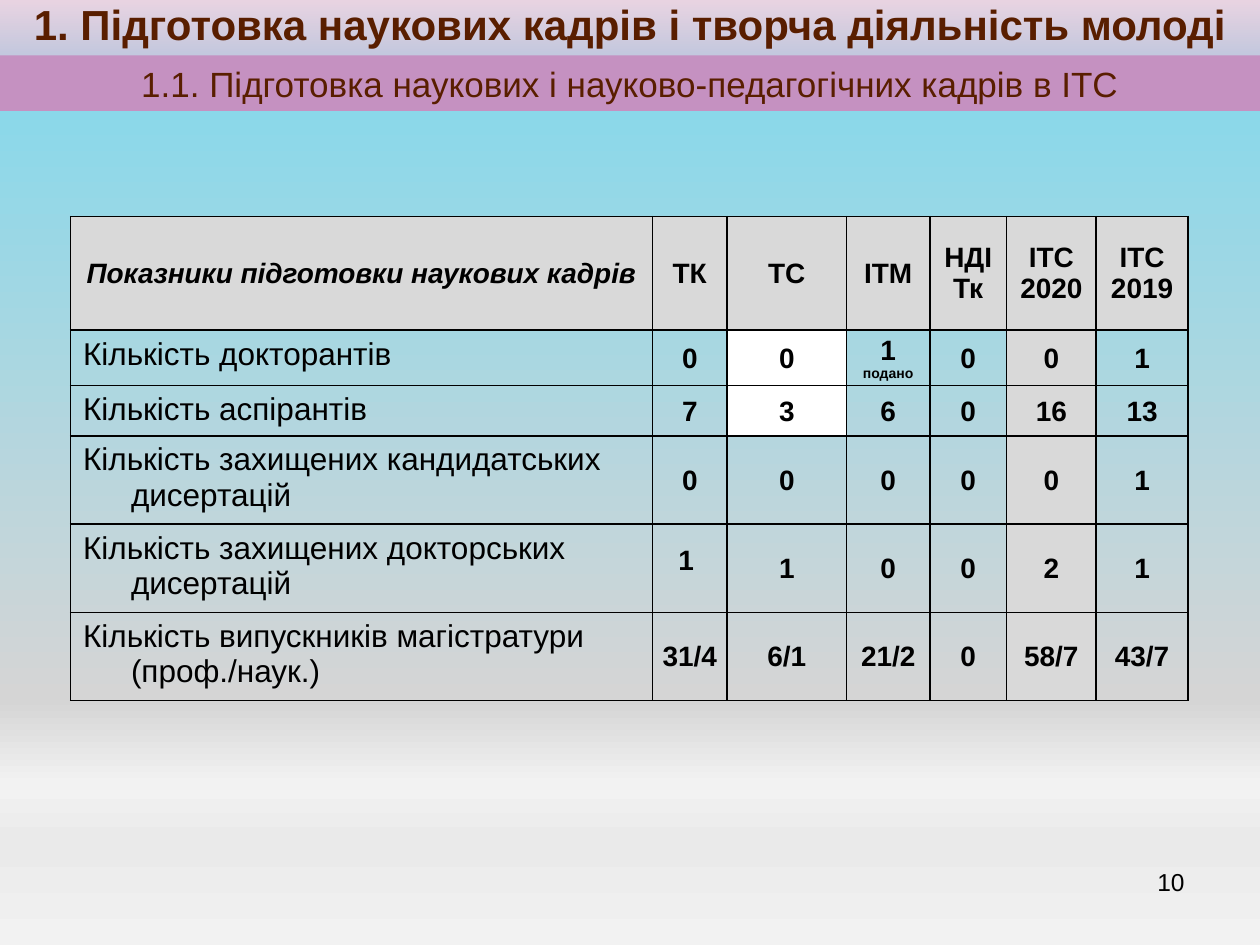
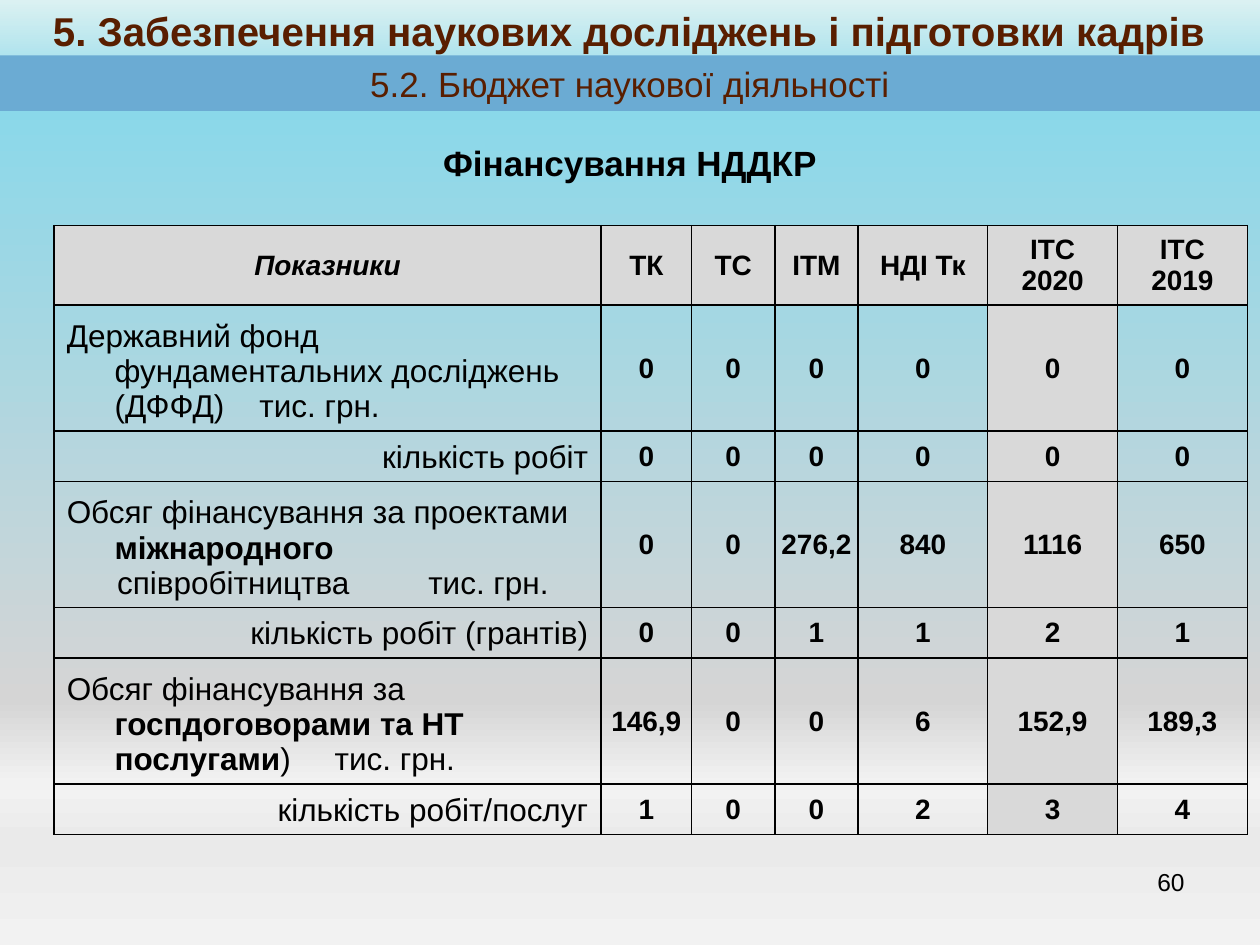
from lxml.etree import SubElement
from pptx import Presentation
from pptx.dml.color import RGBColor
from pptx.enum.shapes import MSO_SHAPE as Shape
from pptx.enum.text import MSO_ANCHOR as Anchor, MSO_AUTO_SIZE as AutoSize, PP_ALIGN as Align
from pptx.oxml.ns import qn
from pptx.util import Inches, Pt

FONT = "Arial"
BLACK, BROWN, GREY, WHITE = "000000", "591E00", "D9D9D9", "FFFFFF"
PINK, SKY, BLUE = "C591C1", "8AD8EA", "6BABD3"
BACKGROUND_STOPS = [(0, "FFFDF6"), (11, SKY), (74, "D5D5D5"),
                    (83, "F2F2F2"), (89, "EAEAEA"), (100, "F2F2F2")]
UNITS = ["ТК", "ТС", "ІТМ", "НДІ Тк", "ІТС 2020", "ІТС 2019"]
CURRENT_YEAR = 5  # table column of ІТС 2020
BAND_BOX = (0, 0.44, 10, 0.44)
NUMBER_BOX = (7.17, 6.83, 2.33, 0.52)
HANGING = (0.38, -0.38)
CONTINUED = (0.38, 0.02)

TRAINING_COLUMNS = [4.62, 0.59, 0.95, 0.66, 0.61, 0.71, 0.73]
TRAINING_ROWS = [
    (0.44, "Кількість докторантів", ["0", "0", "1\nподано", "0", "0", "1"]),
    (0.4, "Кількість аспірантів", ["7", "3", "6", "0", "16", "13"]),
    (0.7, "Кількість захищених кандидатських дисертацій", ["0", "0", "0", "0", "0", "1"]),
    (0.7, "Кількість захищених докторських дисертацій", ["1", "1", "0", "0", "2", "1"]),
    (0.7, "Кількість випускників магістратури\v(проф./наук.)",
     ["31/4", "6/1", "21/2", "0", "58/7", "43/7"]),
]

# A funding label is a list of paragraphs; a span is (text, bold, letter spacing in points).
BUDGET_COLUMNS = [4.34, 0.72, 0.66, 0.66, 1.03, 1.03, 1.03]
BUDGET_ROWS = [
    (1, [[("Державний фонд фундаментальних досліджень (ДФФД)", False, 0),
          (" ", False, 15), ("тис. грн.", False, 0)]], ["0"] * 6),
    (0.4, "кількість робіт", ["0"] * 6),
    (1, [[("Обсяг фінансування за проектами ", False, 0), ("міжнародного", True, 0)],
         [("співробітництва", False, 0), (" ", False, 40), ("тис. грн.", False, 0)]],
     ["0", "0", "276,2", "840", "1116", "650"]),
    (0.4, "кількість робіт (грантів)", ["0", "0", "1", "1", "2", "1"]),
    (1, [[("Обсяг фінансування за ", False, 0), ("госпдоговорами та НТ послугами", True, 0),
          (")", False, 0), (" ", False, 20), ("тис. грн.", False, 0)]],
     ["146,9", "0", "0", "6", "152,9", "189,3"]),
    (0.4, "кількість робіт/послуг", ["1", "0", "0", "2", "3", "4"]),
]


def rgb(color):
    return RGBColor.from_string(color)


def inches(box):
    return [Inches(length) for length in box]


def format_run(run, size, color=BLACK, bold=False, italic=False):
    font = run.font
    font.name, font.size, font.bold, font.italic = FONT, Pt(size), bold, italic
    font.color.rgb = rgb(color)


def format_paragraph(para, size, color=BLACK, bold=False, italic=False,
                     align=Align.CENTER, indent=(0, 0)):
    para.alignment = align
    properties = para._p.get_or_add_pPr()
    for name, length in zip(("marL", "indent"), indent):
        properties.set(name, str(Inches(length)))
    for run in para.runs:
        format_run(run, size, color, bold, italic)


def fill_solid(shape, color, opacity=100):
    shape.fill.solid()
    shape.fill.fore_color.rgb = rgb(color)
    if opacity < 100:
        color_node = shape.element.spPr.find(".//" + qn("a:srgbClr"))
        SubElement(color_node, qn("a:alpha"), val=str(opacity * 1000))


def set_background(master):
    fill = master.background.fill
    fill.gradient()
    fill.gradient_angle = 270
    stops = master.element.find(".//" + qn("p:bg")).find(".//" + qn("a:gsLst"))
    for stop in list(stops):
        stops.remove(stop)
    for position, color in BACKGROUND_STOPS:
        stop = SubElement(stops, qn("a:gs"), pos=str(position * 1000))
        SubElement(stop, qn("a:srgbClr"), val=color)


def add_title(slide, box, text, size, color, opacity, anchor):
    title = slide.shapes.title
    title.left, title.top, title.width, title.height = inches(box)
    fill_solid(title, color, opacity)
    frame = title.text_frame
    frame.text = text
    frame.auto_size = AutoSize.NONE
    frame.vertical_anchor = anchor
    format_paragraph(frame.paragraphs[0], size, BROWN, bold=True)


def add_band(slide, box, text, color):
    band = slide.shapes.add_shape(Shape.RECTANGLE, *inches(box))
    band.shadow.inherit = False
    band.line.fill.background()
    fill_solid(band, color)
    band.text_frame.text = text
    format_paragraph(band.text_frame.paragraphs[0], 20, BROWN)


def add_text(slide, box, text, size, bold=False, align=Align.CENTER):
    frame = slide.shapes.add_textbox(*inches(box)).text_frame
    frame.word_wrap = True
    frame.text = text
    format_paragraph(frame.paragraphs[0], size, bold=bold, align=align)


def format_cell(cell, fill=None, anchor=Anchor.MIDDLE, margins=(0.1, 0.05, 0.1, 0.05)):
    cell.vertical_anchor = anchor
    cell.margin_left, cell.margin_top, cell.margin_right, cell.margin_bottom = inches(margins)
    if fill:
        cell.fill.solid()
        cell.fill.fore_color.rgb = rgb(fill)
    else:
        cell.fill.background()
    properties = cell._tc.get_or_add_tcPr()
    for index, side in enumerate(("lnL", "lnR", "lnT", "lnB")):
        line = SubElement(properties, qn("a:" + side), w=str(Pt(1)))
        SubElement(SubElement(line, qn("a:solidFill")), qn("a:srgbClr"), val=BLACK)
        properties.insert(index, line)


def add_grid(slide, left, top, columns, heights):
    """Add an unstyled table with the given column widths and row heights."""
    box = (left, top, sum(columns), sum(heights))
    table = slide.shapes.add_table(len(heights), len(columns), *inches(box)).table
    table.first_row = table.horz_banding = False
    for column, width in zip(table.columns, columns):
        column.width = Inches(width)
    for row, height in zip(table.rows, heights):
        row.height = Inches(height)
    return table


def fill_header(table, caption):
    for index, text in enumerate([caption] + UNITS):
        cell = table.cell(0, index)
        cell.text = text
        format_cell(cell, GREY)
        format_paragraph(cell.text_frame.paragraphs[0], 16, bold=True, italic=index == 0,
                         indent=HANGING if index < 4 else (0, 0))


def fill_label(cell, label, anchor, align, indent):
    format_cell(cell, anchor=anchor)
    frame = cell.text_frame
    if isinstance(label, str):
        frame.text = label
        format_paragraph(frame.paragraphs[0], 18, align=align, indent=indent)
        return
    for index, spans in enumerate(label):
        para = frame.add_paragraph() if index else frame.paragraphs[0]
        format_paragraph(para, 18, align=align, indent=CONTINUED if index else indent)
        for text, bold, spacing in spans:
            span = para.add_run()
            span.text = text
            format_run(span, 18, bold=bold)
            if spacing:
                span.font._element.set("spc", str(spacing * 100))


def fill_values(table, row, values):
    for column, value in enumerate(values, 1):
        cell = table.cell(row, column)
        cell.text = value
        format_cell(cell, GREY if column == CURRENT_YEAR else None, margins=(0.01, 0.01, 0.01, 0))
        for index, para in enumerate(cell.text_frame.paragraphs):
            format_paragraph(para, 8 if index else 16, bold=True)


def add_slide(deck, number):
    slide = deck.slides.add_slide(deck.slide_layouts[5])
    add_text(slide, NUMBER_BOX, number, 14, align=Align.RIGHT)
    return slide


def build_training_slide(deck):
    slide = add_slide(deck, "10")
    add_title(slide, (0, -0.39, 10, 1.15),
              "1. Підготовка наукових кадрів і творча діяльність молоді",
              24, PINK, 38, Anchor.MIDDLE)
    add_band(slide, BAND_BOX, "1.1. Підготовка наукових і науково-педагогічних кадрів в ІТС", PINK)
    heights = [0.9] + [height for height, _, _ in TRAINING_ROWS]
    table = add_grid(slide, 0.56, 1.72, TRAINING_COLUMNS, heights)
    fill_header(table, "Показники підготовки наукових кадрів")
    for row, (_, label, values) in enumerate(TRAINING_ROWS, 1):
        fill_label(table.cell(row, 0), label, Anchor.TOP, Align.LEFT, HANGING)
        fill_values(table, row, values)
    for row in (1, 2):
        white_cell = table.cell(row, 2)
        white_cell.fill.solid()
        white_cell.fill.fore_color.rgb = rgb(WHITE)
    raised_cell = table.cell(4, 1)
    raised_cell.margin_right, raised_cell.margin_bottom = inches((0.07, 0.13))


def build_budget_slide(deck):
    slide = add_slide(deck, "60")
    add_title(slide, (0, 0, 10, 0.6), "5. Забезпечення наукових досліджень і підготовки кадрів",
              23, SKY, 30, Anchor.TOP)
    add_band(slide, BAND_BOX, "5.2. Бюджет наукової діяльності", BLUE)
    add_text(slide, (0, 1.07, 10, 0.44), "Фінансування НДДКР", 20, bold=True)
    left, top, header_height = 0.43, 1.79, 0.63
    fill_header(add_grid(slide, left, top, BUDGET_COLUMNS, [header_height]), "Показники")
    heights = [height for height, _, _ in BUDGET_ROWS]
    table = add_grid(slide, left, top + header_height, BUDGET_COLUMNS, heights)
    for row, (_, label, values) in enumerate(BUDGET_ROWS):
        is_count = row % 2 == 1
        fill_label(table.cell(row, 0), label, Anchor.BOTTOM,
                   Align.RIGHT if is_count else Align.LEFT,
                   CONTINUED if is_count else HANGING)
        fill_values(table, row, values)


def main():
    deck = Presentation()
    deck.slide_width, deck.slide_height = inches((10, 7.5))
    set_background(deck.slide_master)
    build_training_slide(deck)
    build_budget_slide(deck)
    deck.save("out.pptx")


if __name__ == "__main__":
    main()
